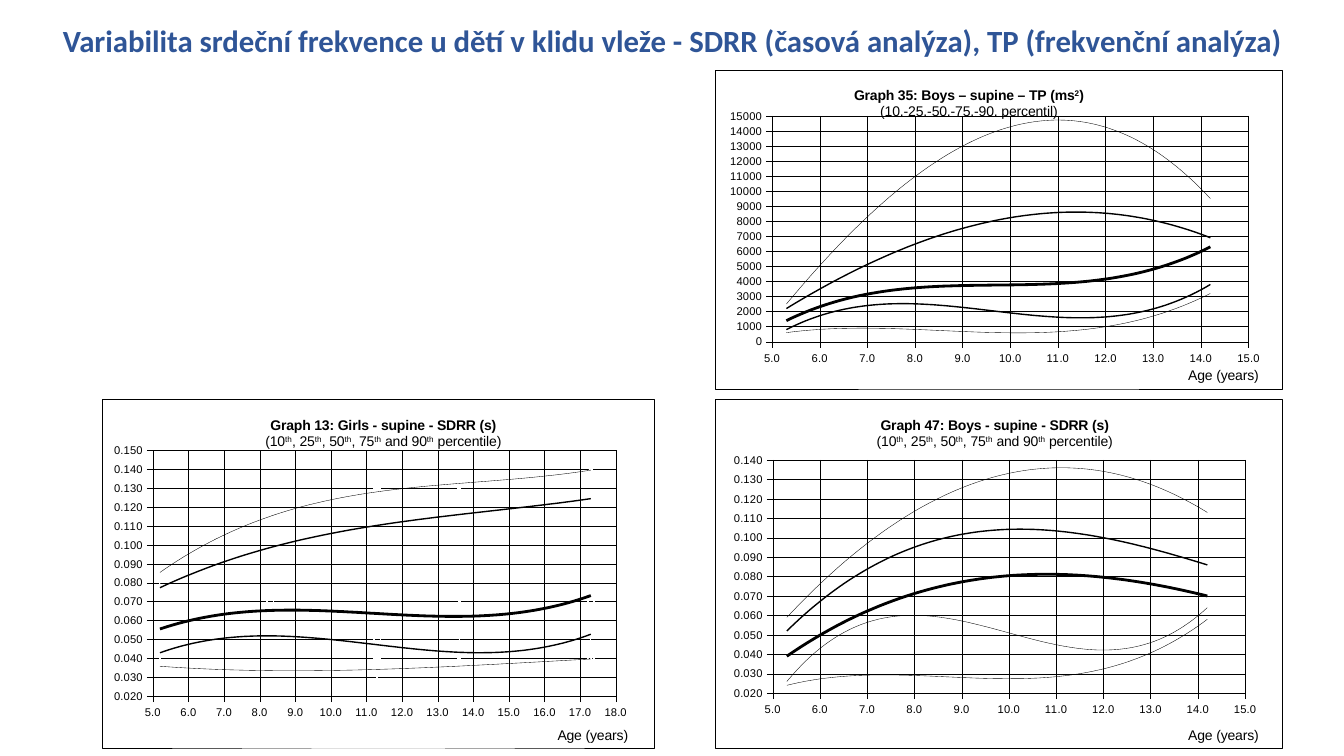
from pptx import Presentation
from pptx.chart.data import XyChartData
from pptx.dml.color import RGBColor
from pptx.enum.chart import XL_CHART_TYPE, XL_MARKER_STYLE, XL_TICK_MARK
from pptx.enum.text import MSO_ANCHOR, PP_ALIGN
from pptx.oxml import parse_xml
from pptx.oxml.ns import nsdecls, qn
from pptx.util import Pt

SCATTER = XL_CHART_TYPE.XY_SCATTER
MARK = XL_MARKER_STYLE
OUT, NO_TICK = XL_TICK_MARK.OUTSIDE, XL_TICK_MARK.NONE
CENTER, TOP = PP_ALIGN.CENTER, MSO_ANCHOR.TOP

THEME = {
    "blue": "2F5597", "black": "000000", "white": "FFFFFF",
    "head": "Calibri", "body": "Arial",
    "title": 22, "label": 10, "tick": 8, "hair": 0.25,
}
NS = nsdecls("c", "a")


def write(frame, text, size=THEME["label"], font=THEME["body"],
          color=THEME["black"], bold=False):
    """Fill a frame; ^ switches superscript, bold covers the first line only."""
    for row, line in enumerate(text.split("\n")):
        para = frame.add_paragraph() if row else frame.paragraphs[0]
        para.alignment = CENTER
        for part, words in enumerate(line.split("^")):
            if not words:
                continue
            run = para.add_run()
            run.text = words
            run.font.size, run.font.name = Pt(size), font
            run.font.bold = bold and row == 0
            run.font.color.rgb = RGBColor.from_string(color)
            if part % 2:
                run.font._element.set("baseline", "30000")


def place(node, index, x, y, w=None, h=None):
    """Set a chart part's manual layout, as fractions of the chart."""
    for old in node.findall(qn("c:layout")):
        node.remove(old)
    tags = '<c:layoutTarget val="inner"/>' if w else ""
    tags += '<c:xMode val="edge"/><c:yMode val="edge"/>'
    sizes = {"x": x, "y": y, "w": w, "h": h}
    tags += "".join(f'<c:{k} val="{v}"/>' for k, v in sizes.items() if v)
    node.insert(index, parse_xml(
        f"<c:layout {NS}><c:manualLayout>{tags}</c:manualLayout></c:layout>"))


BOYS = [5.3, 8.1, 11.2, 14.2]
GIRLS = [5.2, 8.3, 11.3, 13.6, 17.3]
PERCENT = "(10^th^, 25^th^, 50^th^, 75^th^ and 90^th^ percentile)"
WIDTHS = [0.25, 1, 2, 1, 0.25]
graphs = [
    dict(box=(510.5, 49.8, 405.4, 228.2), ages=BOYS, end=15,
         title="Graph 35: Boys – supine – TP (ms^2^)\n(10.-25.-50.-75.-90. percentil)",
         spot=(0.24, 0.04), note=(0.83, 0.92), plot=(0.101, 0.144, 0.84, 0.708),
         scale=(0, 15000, 1000), fmt="0", widths=WIDTHS, marks=[MARK.NONE] * 5,
         rows=[[2500, 11200, 14700, 9500], [2200, 6600, 8600, 6900],
               [1400, 3600, 3900, 6300], [800, 2500, 1600, 3800],
               [600, 800, 700, 3200]]),
    dict(box=(510.5, 285.1, 405.4, 249.6), ages=BOYS, end=15,
         title="Graph 47: Boys - supine - SDRR (s)\n" + PERCENT,
         spot=(0.28, 0.04), note=(0.83, 0.93), plot=(0.102, 0.174, 0.833, 0.668),
         scale=(0.02, 0.14, 0.01), fmt="0.000", widths=[0.25, 1, 2, 0.25, 0.25],
         marks=[MARK.NONE] * 5,
         rows=[[0.059, 0.115, 0.136, 0.113], [0.052, 0.096, 0.103, 0.086],
               [0.039, 0.072, 0.081, 0.07], [0.026, 0.06, 0.044, 0.064],
               [0.024, 0.029, 0.029, 0.058]]),
    dict(box=(72.8, 285.1, 394.8, 249.2), ages=GIRLS, end=18,
         title="Graph 13: Girls - supine - SDRR (s)\n" + PERCENT,
         spot=(0.29, 0.04), note=(0.82, 0.93), plot=(0.092, 0.147, 0.838, 0.705),
         scale=(0.02, 0.15, 0.01), fmt="0.000", widths=WIDTHS,
         marks=[MARK.TRIANGLE, MARK.TRIANGLE, MARK.X, MARK.DIAMOND, MARK.STAR],
         rows=[[0.086, 0.113, 0.132, 0.13, 0.14], [0.078, 0.096, 0.115, 0.113, 0.125],
               [0.054, 0.072, 0.052, 0.07, 0.072], [0.042, 0.056, 0.04, 0.048, 0.052],
               [0.035, 0.037, 0.028, 0.04, 0.039]]),
]

deck = Presentation()
deck.slide_width, deck.slide_height = Pt(960), Pt(540)
slide = deck.slides.add_slide(deck.slide_layouts[5])

head = slide.shapes.title
head.left, head.top, head.width, head.height = Pt(14.4), Pt(12.2), Pt(931.7), Pt(33.8)
head.text_frame.word_wrap = True
head.text_frame.vertical_anchor = TOP
write(head.text_frame,
      "Variabilita srdeční frekvence u dětí v klidu vleže - "
      "SDRR (časová analýza), TP (frekvenční analýza)",
      size=THEME["title"], font=THEME["head"], color=THEME["blue"], bold=True)

for graph in graphs:
    data = XyChartData(number_format=graph["fmt"])
    for num, row in enumerate(graph["rows"], 1):
        series = data.add_series(f"Series {num}")
        for age, value in zip(graph["ages"], row):
            series.add_data_point(age, value)
    box = [Pt(length) for length in graph["box"]]
    chart = slide.shapes.add_chart(SCATTER, *box, data).chart
    chart.has_legend = False
    chart.font.size, chart.font.name = Pt(THEME["tick"]), THEME["body"]
    chart.font.color.rgb = RGBColor.from_string(THEME["black"])

    # Frame of the chart
    root = chart._chartSpace.find(qn("c:chart"))
    if chart._chartSpace.find(qn("c:roundedCorners")) is None:
        root.addprevious(parse_xml(f'<c:roundedCorners {NS} val="0"/>'))
    root.addnext(parse_xml(
        f'<c:spPr {NS}><a:solidFill><a:srgbClr val="{THEME["white"]}"/></a:solidFill>'
        f'<a:ln w="{Pt(THEME["hair"])}"><a:solidFill><a:srgbClr val="{THEME["black"]}"/>'
        "</a:solidFill></a:ln></c:spPr>"))

    # Titles and plot area
    write(chart.chart_title.text_frame, graph["title"], bold=True)
    place(chart.chart_title._element, 1, *graph["spot"])
    place(root.find(qn("c:plotArea")), 0, *graph["plot"])
    years = chart.category_axis
    write(years.axis_title.text_frame, "Age (years)")
    place(years.axis_title._element, 1, *graph["note"])

    # Axes
    scales = [(years, (5, graph["end"], 1), "0.0"),
              (chart.value_axis, graph["scale"], graph["fmt"])]
    for axis, (low, high, step), fmt in scales:
        axis.minimum_scale, axis.maximum_scale, axis.major_unit = low, high, step
        axis.major_tick_mark, axis.minor_tick_mark = OUT, NO_TICK
        axis.has_major_gridlines = True
        for line in (axis.format.line, axis.major_gridlines.format.line):
            line.width = Pt(THEME["hair"])
            line.color.rgb = RGBColor.from_string(THEME["black"])
        labels = axis.tick_labels
        labels.number_format, labels.number_format_is_linked = fmt, False
        labels.font.size, labels.font.name = Pt(THEME["tick"]), THEME["body"]
        labels.font.color.rgb = RGBColor.from_string(THEME["black"])

    # Cubic trend lines carry the curves
    for series, width, mark in zip(chart.plots[0].series, graph["widths"], graph["marks"]):
        series.format.line.fill.background()
        series.marker.style = mark
        if mark != MARK.NONE:
            series.marker.size = 5
            series.marker.format.fill.background()
            series.marker.format.line.fill.background()
        series._element.find(qn("c:xVal")).addprevious(parse_xml(
            f'<c:trendline {NS}><c:spPr><a:ln w="{Pt(width)}"><a:solidFill>'
            f'<a:srgbClr val="{THEME["black"]}"/></a:solidFill></a:ln></c:spPr>'
            '<c:trendlineType val="poly"/><c:order val="3"/>'
            '<c:dispRSqr val="0"/><c:dispEq val="0"/></c:trendline>'))

deck.save("out.pptx")
